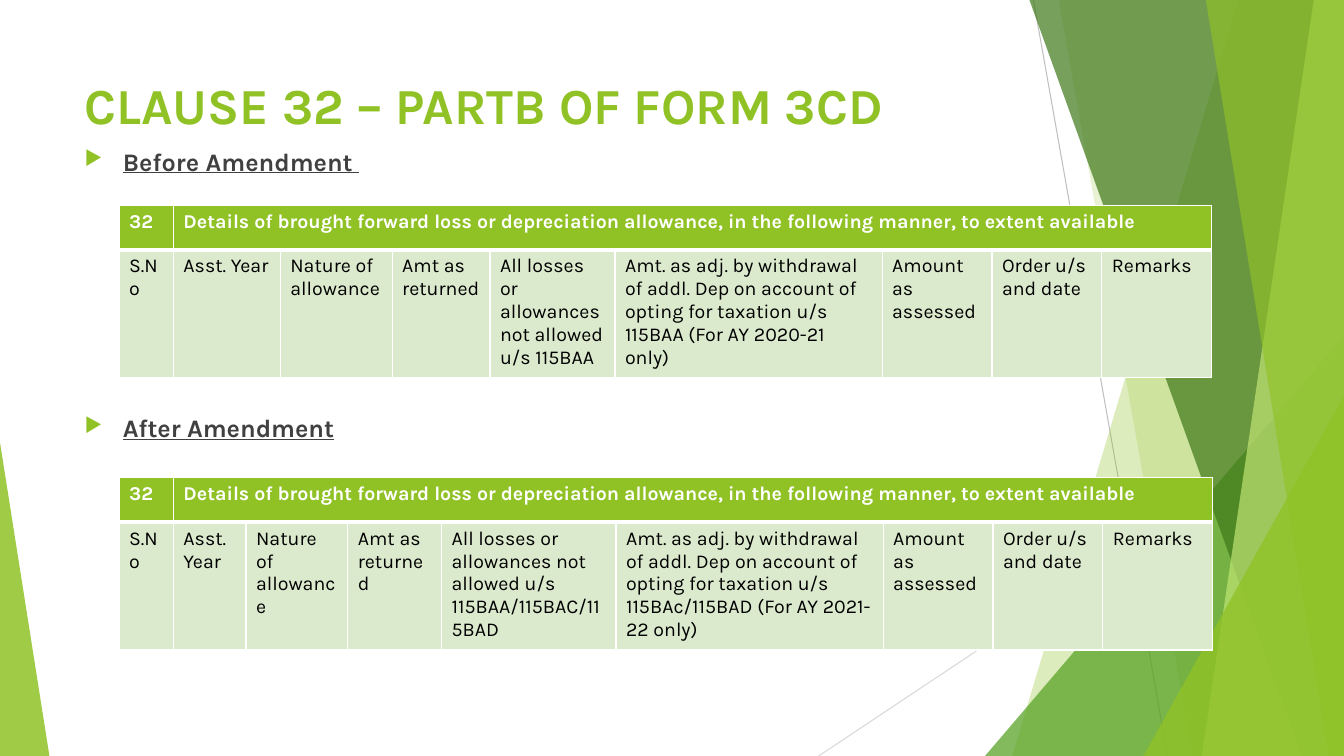
from dataclasses import dataclass

from lxml.etree import SubElement
from pptx import Presentation
from pptx.dml.color import RGBColor
from pptx.enum.shapes import MSO_CONNECTOR as Connector, MSO_SHAPE as Preset
from pptx.enum.text import MSO_ANCHOR as Anchor
from pptx.oxml import parse_xml
from pptx.oxml.ns import nsdecls, qn
from pptx.util import Inches, Pt


@dataclass(frozen=True)
class Theme:
    font: str = "Karla"
    lime: str = "90C226"
    pale_lime: str = "C0E474"
    green: str = "54A021"
    forest: str = "3F7819"
    cell: str = "DBE9CD"
    white: str = "FFFFFF"
    black: str = "000000"
    text: str = "404040"
    title_size: int = 36
    heading_size: int = 18
    table_size: int = 14


@dataclass(frozen=True)
class Ray:
    start: tuple[float, float]
    end: tuple[float, float]
    color: str


@dataclass(frozen=True)
class Pane:
    """Slanted left edge, reaching to the right edge of the slide."""
    top_x: float
    bottom_x: float
    color: str
    opacity: int


@dataclass(frozen=True)
class Wedge:
    """Right triangle standing on the bottom edge of the slide."""
    left: float
    top: float
    width: float
    apex: int
    color: str
    opacity: int


@dataclass(frozen=True)
class Section:
    heading: str
    heading_top: float
    table_top: float
    widths: tuple[float, ...]
    losses: str
    adjusted: str


THEME = Theme()
WIDTH, HEIGHT = 13.33, 7.5
MARGIN = 0.74
TABLE_LEFT = 1.18
ROW_HEIGHTS = (0.44, 1.23)
SHARED_WIDTHS = (2.65, 1.09, 1.09, 1.09)

RAYS = (
    Ray((10.25, 0), (11.58, HEIGHT), "BFBFBF"),
    Ray((WIDTH, 4.03), (8.12, HEIGHT), "D9D9D9"),
)
FACETS = (
    Pane(12.28, 10.04, THEME.lime, 30),
    Pane(10.5, 11.83, THEME.lime, 20),
    Wedge(9.77, 3.33, 3.56, 1, THEME.green, 72),
    Pane(10.21, 12.91, THEME.forest, 70),
    Pane(13.03, 11.92, THEME.pale_lime, 70),
    Pane(11.96, 13.18, THEME.lime, 65),
    Wedge(11.34, 3.93, 1.99, 1, THEME.lime, 80),
    Wedge(0, 4.39, 0.49, 0, THEME.lime, 85),
)
CLAUSE = "Details of brought forward loss or depreciation allowance, in the following manner, to extent available"
SECTIONS = (
    Section("Before Amendment ", 1.4, 2.04, (0.54, 1.06, 1.11, 0.97, 1.24),
            "115BAA", "115BAA (For AY 2020-21 only)"),
    Section("After Amendment", 4.04, 4.74, (0.54, 0.72, 1.01, 0.93, 1.73),
            "115BAA/115BAC/115BAD", "115BAc/115BAD (For AY 2021-22 only)"),
)


def add_run(paragraph, text: str, size: int, color: str, bold: bool = True, underline: bool = False) -> None:
    run = paragraph.add_run()
    run.text = text
    font = run.font
    font.name, font.size, font.bold = THEME.font, Pt(size), bold
    font.color.rgb = RGBColor.from_string(color)
    if underline:
        font.underline = True


def add_textbox(slide, top: float, width: float, height: float):
    frame = slide.shapes.add_textbox(Inches(MARGIN), Inches(top), Inches(width), Inches(height)).text_frame
    frame.word_wrap = True
    return frame


def draw_ray(slide, ray: Ray) -> None:
    line = slide.shapes.add_connector(Connector.STRAIGHT, *map(Inches, ray.start + ray.end))
    line.line.color.rgb = RGBColor.from_string(ray.color)
    line.line.width = Pt(0.75)
    SubElement(line._element.spPr, qn("a:effectLst"))


def draw_facet(slide, facet: Pane | Wedge) -> None:
    if isinstance(facet, Pane):
        outline = slide.shapes.build_freeform(Inches(facet.top_x), 0)
        corners = ((WIDTH, 0), (WIDTH, HEIGHT), (facet.bottom_x, HEIGHT))
        outline.add_line_segments([(Inches(x), Inches(y)) for x, y in corners], close=True)
        shape = outline.convert_to_shape()
    else:
        box = (facet.left, facet.top, facet.width, HEIGHT - facet.top)
        shape = slide.shapes.add_shape(Preset.ISOSCELES_TRIANGLE, *map(Inches, box))
        shape.adjustments[0] = facet.apex
    shape.shadow.inherit = False
    shape.line.fill.background()
    shape.fill.solid()
    shape.fill.fore_color.rgb = RGBColor.from_string(facet.color)
    color = shape._element.spPr.find(f"{qn('a:solidFill')}/{qn('a:srgbClr')}")
    SubElement(color, qn("a:alpha"), val=str(facet.opacity * 1000))


def draw_heading(slide, section: Section) -> None:
    paragraph = add_textbox(slide, section.heading_top, 9.4, 0.4).paragraphs[0]
    add_run(paragraph, section.heading, THEME.heading_size, THEME.text, underline=True)
    # Green arrow bullet with a hanging indent
    props = paragraph._p.get_or_add_pPr()
    props.set("marL", str(Inches(0.38)))
    props.set("indent", str(Inches(-0.38)))
    SubElement(SubElement(props, qn("a:buClr")), qn("a:srgbClr"), val=THEME.lime)
    SubElement(props, qn("a:buSzPct"), val="80000")
    SubElement(props, qn("a:buChar"), char="▶")


def style_cell(cell, header: bool) -> None:
    cell.fill.solid()
    cell.fill.fore_color.rgb = RGBColor.from_string(THEME.lime if header else THEME.cell)
    # A thick rule divides the header row from the row below
    edges = {"L": 1, "R": 1, "T": 1 if header else 3, "B": 3 if header else 1}
    for index, (side, points) in enumerate(edges.items()):
        border = parse_xml(
            f'<a:ln{side} {nsdecls("a")} w="{Pt(points)}"><a:solidFill>'
            f'<a:srgbClr val="{THEME.white}"/></a:solidFill></a:ln{side}>')
        cell._tc.get_or_add_tcPr().insert(index, border)


def draw_table(slide, section: Section) -> None:
    widths = section.widths + SHARED_WIDTHS
    labels = (
        "S.No", "Asst. Year", "Nature of allowance", "Amt as returned",
        f"All losses or allowances not allowed u/s {section.losses}",
        f"Amt. as adj. by withdrawal of addl. Dep on account of opting for taxation u/s {section.adjusted}",
        "Amount as assessed", "Order u/s and date", "Remarks",
    )
    box = (TABLE_LEFT, section.table_top, sum(widths), sum(ROW_HEIGHTS))
    table = slide.shapes.add_table(2, len(widths), *map(Inches, box)).table
    for column, width in zip(table.columns, widths):
        column.width = Inches(width)
    for row, height in zip(table.rows, ROW_HEIGHTS):
        row.height = Inches(height)
    table.cell(0, 1).merge(table.cell(0, len(widths) - 1))
    for row_index, texts in enumerate((("32", CLAUSE), labels)):
        header = row_index == 0
        for cell in table.rows[row_index].cells:
            style_cell(cell, header)
        for column_index, text in enumerate(texts):
            paragraph = table.cell(row_index, column_index).text_frame.paragraphs[0]
            add_run(paragraph, text, THEME.table_size, THEME.white if header else THEME.black, header)


def main() -> None:
    deck = Presentation()
    deck.slide_width, deck.slide_height = Inches(WIDTH), Inches(HEIGHT)
    slide = deck.slides.add_slide(deck.slide_layouts[6])

    # Faceted backdrop
    for ray in RAYS:
        draw_ray(slide, ray)
    for facet in FACETS:
        draw_facet(slide, facet)

    # Title
    title = add_textbox(slide, 0.67, 9.4, 0.74)
    title.vertical_anchor = Anchor.MIDDLE
    add_run(title.paragraphs[0], "CLAUSE 32 – PARTB OF FORM 3CD", THEME.title_size, THEME.lime)

    # Clause before and after the amendment
    for section in SECTIONS:
        draw_heading(slide, section)
        draw_table(slide, section)

    deck.save("out.pptx")


if __name__ == "__main__":
    main()
